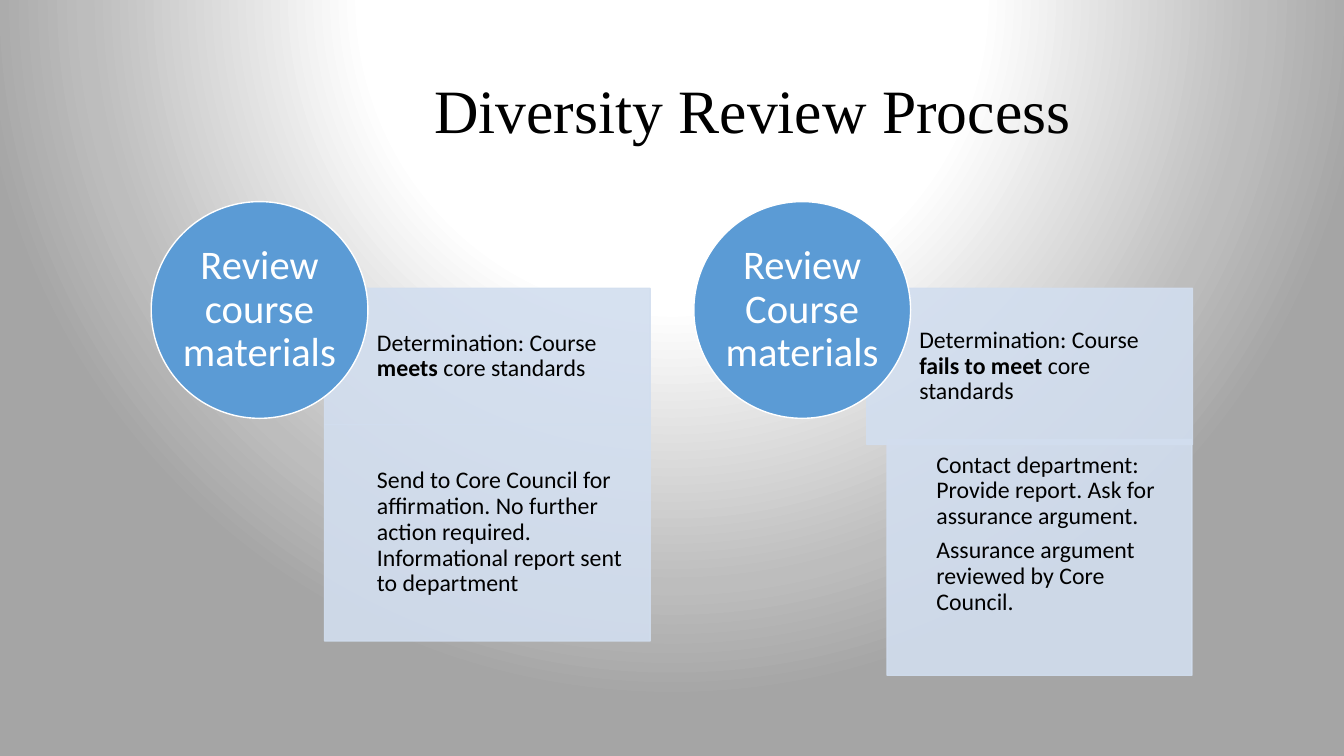
from dataclasses import dataclass

from lxml import etree
from pptx import Presentation
from pptx.dml.color import RGBColor
from pptx.enum.shapes import MSO_SHAPE as SHAPE
from pptx.enum.text import MSO_ANCHOR as ANCHOR, PP_ALIGN as ALIGN
from pptx.oxml import parse_xml
from pptx.oxml.ns import nsdecls, qn
from pptx.util import Pt

BLACK = RGBColor(0x00, 0x00, 0x00)
WHITE = RGBColor(0xFF, 0xFF, 0xFF)
BLUE = RGBColor(0x5B, 0x9B, 0xD5)
PALE_BLUE = RGBColor(0xD2, 0xDE, 0xEF)
BACKDROP_STOPS = ((0, "FFFFFF"), (40, "FFFFFF"), (76, "BDBDBD"), (91, "A5A5A5"))

CIRCLE_TOP, CIRCLE_SIZE = 144, 154.8
PANEL_INSET = 9.36


@dataclass
class Panel:
    left: float
    top: float
    width: float
    height: float
    indent: float
    paragraphs: list[str]  # text between asterisks is bold
    anchor: ANCHOR = ANCHOR.MIDDLE


@dataclass
class Track:
    circle_left: float
    step: str
    panels: list[Panel]


TRACKS = [
    Track(108, "Review course materials", [
        Panel(231.84, 205.92, 232.56, 97.2, 37.44,
              ["Determination: Course *meets* core standards"]),
        Panel(231.84, 303.12, 232.56, 154.8, 37.44,
              ["Send to Core Council for affirmation. No further action required. "
               "Informational report sent to department"]),
    ]),
    Track(495.6, "Review Course materials", [
        Panel(619.2, 205.92, 232.56, 111.6, 37.44,
              ["Determination: Course *fails to meet *core standards"]),
        Panel(633.6, 313.92, 217.8, 168.48, 35.28,
              ["Contact department: Provide report. Ask for assurance argument.",
               "Assurance argument reviewed by Core Council."], ANCHOR.TOP),
    ]),
]


def set_backdrop(s) -> None:
    """Give the slide a circular gradient centred above its top edge."""
    stops = "".join(f'<a:gs pos="{pos * 1000}"><a:srgbClr val="{color}"/></a:gs>'
                    for pos, color in BACKDROP_STOPS)
    s.element.cSld.insert(0, parse_xml(
        f'<p:bg {nsdecls("p", "a")}><p:bgPr><a:gradFill rotWithShape="1">'
        f'<a:gsLst>{stops}</a:gsLst><a:path path="circle">'
        '<a:fillToRect l="50000" t="-80000" r="50000" b="180000"/></a:path>'
        '</a:gradFill><a:effectLst/></p:bgPr></p:bg>'))


def add_filled(s, kind: SHAPE, box: tuple, fill: RGBColor, line: RGBColor):
    sp = s.shapes.add_shape(kind, *map(Pt, box))
    sp.shadow.inherit = False
    sp.fill.solid()
    sp.fill.fore_color.rgb = fill
    sp.line.color.rgb = line
    sp.line.width = Pt(1)
    return sp


def set_opacity(sp, percent: int) -> None:
    for color in sp.element.spPr.iter(qn("a:srgbClr")):
        etree.SubElement(color, qn("a:alpha"), val=str(percent * 1000))


def write(sp, paragraphs: list[str], size: float, color: RGBColor, align: ALIGN,
          anchor: ANCHOR, insets: tuple, font: str = "Calibri", after: float = 0) -> None:
    tf = sp.text_frame
    tf.word_wrap = True
    tf.vertical_anchor = anchor
    tf.margin_left, tf.margin_top, tf.margin_right, tf.margin_bottom = map(Pt, insets)
    for i, text in enumerate(paragraphs):
        p = tf.add_paragraph() if i else tf.paragraphs[0]
        p.alignment = align
        p.line_spacing = 0.9
        p.space_after = Pt(after)
        p.font.name = font
        p.font.size = Pt(size)
        p.font.color.rgb = color
        for j, part in enumerate(text.split("*")):
            r = p.add_run()
            r.text = part
            if j % 2:
                r.font.bold = True


def draw_panel(s, panel: Panel) -> None:
    box = (panel.left, panel.top, panel.width, panel.height)
    sp = add_filled(s, SHAPE.RECTANGLE, box, PALE_BLUE, PALE_BLUE)
    set_opacity(sp, 90)
    write(sp, panel.paragraphs, 17, BLACK, ALIGN.LEFT, panel.anchor,
          (panel.indent, PANEL_INSET, PANEL_INSET, PANEL_INSET), after=6)


def draw_track(s, track: Track) -> None:
    for panel in track.panels:
        draw_panel(s, panel)
    box = (track.circle_left, CIRCLE_TOP, CIRCLE_SIZE, CIRCLE_SIZE)
    sp = add_filled(s, SHAPE.OVAL, box, BLUE, WHITE)
    write(sp, [track.step], 29, WHITE, ALIGN.CENTER, ANCHOR.MIDDLE, (0, 0, 0, 0), after=10)


def main() -> None:
    prs = Presentation()
    prs.slide_width, prs.slide_height = Pt(960), Pt(540)
    s = prs.slides.add_slide(prs.slide_layouts[6])
    set_backdrop(s)
    title = s.shapes.add_textbox(Pt(182), Pt(28.8), Pt(711.4), Pt(104.4))
    write(title, ["Diversity Review Process"], 44, BLACK, ALIGN.CENTER,
          ANCHOR.MIDDLE, (7.2, 3.6, 7.2, 3.6), font="Times New Roman")
    for track in TRACKS:
        draw_track(s, track)
    prs.save("out.pptx")


if __name__ == "__main__":
    main()
